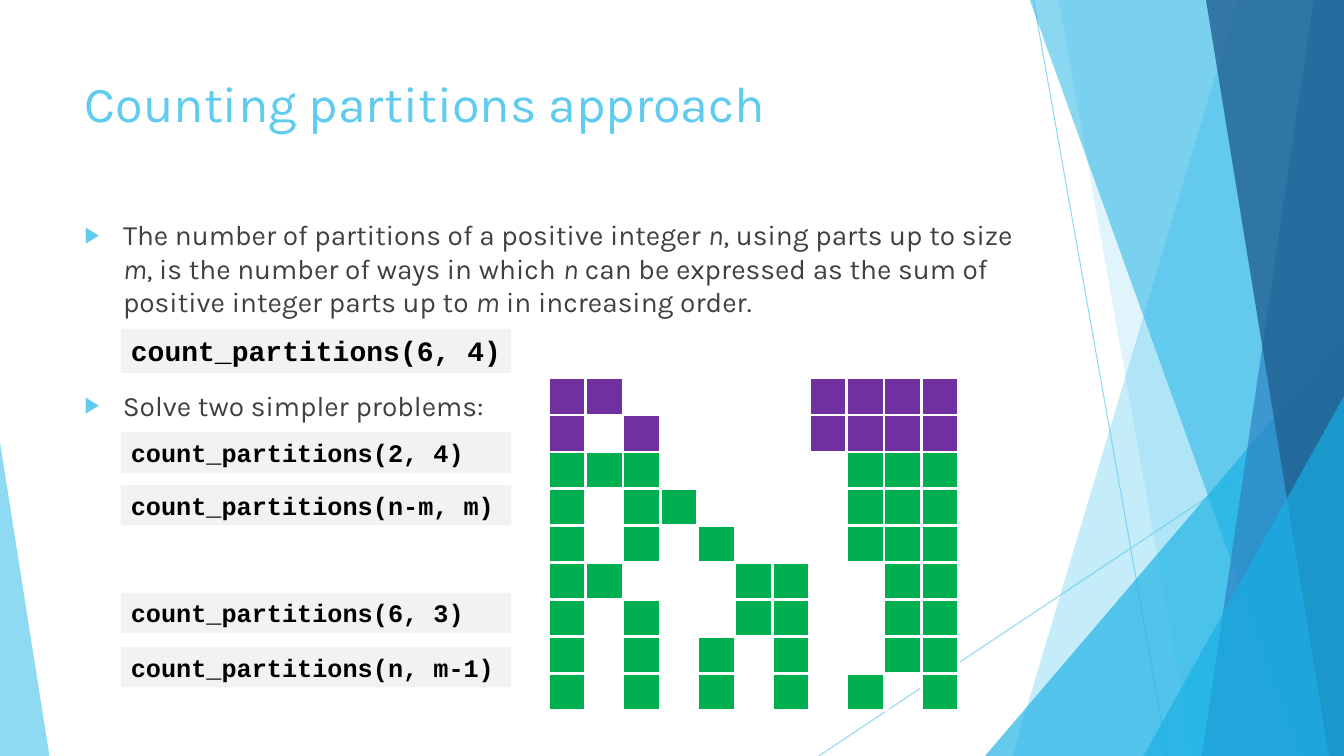
from dataclasses import dataclass

import pptx
import pptx.dml.color
import pptx.enum.shapes
import pptx.enum.text
import pptx.oxml
import pptx.oxml.ns
import pptx.util

Inches = pptx.util.Inches
Pt = pptx.util.Pt
qn = pptx.oxml.ns.qn
Kind = pptx.enum.shapes.MSO_SHAPE
Anchor = pptx.enum.text.MSO_ANCHOR

WIDE, HIGH = 13.33, 7.5
SPACE = 'xmlns:a="http://schemas.openxmlformats.org/drawingml/2006/main"'
COLORS = {
    "sky": "5FCBEF", "cyan": "17B0E4", "blue": "2E83C3", "navy": "226292",
    "text": "404040", "code": "000000", "box": "F2F2F2", "white": "FFFFFF",
    "purple": "7030A0", "green": "00B050",
}


@dataclass
class Band:
    top: float
    base: float
    color: str
    alpha: int


@dataclass
class Wedge:
    left: float
    top: float
    width: float
    tip: float
    color: str
    alpha: int


@dataclass
class Ray:
    start: tuple[float, float]
    end: tuple[float, float]


@dataclass
class Call:
    text: str
    top: float
    height: float = 0.4
    size: int = 18


@dataclass
class Grid:
    color: str
    rows: list[str]


DECOR = [
    Ray((10.25, 0), (11.58, HIGH)),
    Ray((WIDE, 4.03), (8.12, HIGH)),
    Band(12.28, 10.04, "sky", 36),
    Band(10.5, 11.83, "sky", 20),
    Wedge(9.77, 3.33, 3.56, 1, "cyan", 66),
    Band(10.21, 12.91, "cyan", 50),
    Band(13.03, 11.92, "blue", 70),
    Band(11.96, 13.18, "navy", 80),
    Wedge(11.34, 3.93, 1.99, 1, "cyan", 66),
    Wedge(0, 4.39, 0.49, 0, "sky", 70),
]
BLANK = "." * 11
TOP_GRID = Grid("purple", ["##.....####", "#.#....####"] + [BLANK] * 7)
LOW_GRID = Grid("green", [BLANK] * 2 + [
    "###.....###",
    "#.##....###",
    "#.#.#...###",
    "##...##..##",
    "#.#..##..##",
    "#.#.#.#..##",
    "#.#.#.#.#.#",
])
MAIN_CALL = Call("count_partitions(6, 4)", 3.26, 0.44, 20)
SUB_CALLS = [
    Call("count_partitions(2, 4)", 4.29),
    Call("count_partitions(n-m, m)", 4.81),
    Call("count_partitions(6, 3)", 5.88),
    Call("count_partitions(n, m-1)", 6.42),
]


def tint(name: str) -> pptx.dml.color.RGBColor:
    return pptx.dml.color.RGBColor.from_string(COLORS[name])


def node(xml: str):
    return pptx.oxml.parse_xml(xml.replace(" ", f" {SPACE} ", 1))


def fade(shape, alpha: int) -> None:
    for color in shape._element.spPr.iter(qn("a:srgbClr")):
        color.append(node(f'<a:alpha val="{alpha * 1000}"/>'))


def paint(shape, color: str, alpha: int = 100) -> None:
    shape.shadow.inherit = False
    shape.fill.solid()
    shape.fill.fore_color.rgb = tint(color)
    shape.line.fill.background()
    if alpha < 100:
        fade(shape, alpha)


def write(shape, text: str, *, size: int, color: str, font: str = "Karla",
          bold: bool = False, bullet: bool = False, anchor=Anchor.TOP) -> None:
    frame = shape.text_frame
    frame.word_wrap = True
    frame.auto_size = pptx.enum.text.MSO_AUTO_SIZE.NONE
    frame.vertical_anchor = anchor
    frame.margin_right = 0
    para = frame.paragraphs[0]
    para.alignment = pptx.enum.text.PP_ALIGN.LEFT
    para.space_before = Pt(10 if bullet else 0)
    if bullet:
        props = para._p.get_or_add_pPr()
        props.set("marL", str(Inches(0.38)))
        props.set("indent", str(-Inches(0.38)))
        for xml in (f'<a:buClr ><a:srgbClr val="{COLORS["sky"]}"/></a:buClr>',
                    '<a:buSzPct val="80000"/>', '<a:buFont typeface="Arial"/>',
                    '<a:buChar char="▶"/>'):
            props.append(node(xml))
    for index, part in enumerate(text.split("*")):
        run = para.add_run()
        run.text = part
        run.font.name = font
        run.font.size = Pt(size)
        run.font.bold = bold
        run.font.italic = index % 2 == 1
        run.font.color.rgb = tint(color)


def place(shape, left: float, top: float, width: float, height: float) -> None:
    shape.left, shape.top = Inches(left), Inches(top)
    shape.width, shape.height = Inches(width), Inches(height)


def draw_ray(shapes, ray: Ray) -> None:
    ends = [Inches(value) for value in ray.start + ray.end]
    line = shapes.add_connector(pptx.enum.shapes.MSO_CONNECTOR.STRAIGHT, *ends)
    line.line.color.rgb = tint("sky")
    line.line.width = Pt(0.75)
    fade(line, 70)
    line._element.spPr.append(node("<a:effectLst />"))


def draw_band(shapes, band: Band) -> None:
    pen = shapes.build_freeform(Inches(band.top), Inches(-0.01), scale=1.0)
    ends = [(WIDE, -0.01), (WIDE, HIGH), (band.base, HIGH)]
    pen.add_line_segments([(Inches(x), Inches(y)) for x, y in ends])
    paint(pen.convert_to_shape(), band.color, band.alpha)


def draw_wedge(shapes, wedge: Wedge) -> None:
    shape = shapes.add_shape(
        Kind.ISOSCELES_TRIANGLE, Inches(wedge.left), Inches(wedge.top),
        Inches(wedge.width), Inches(HIGH - wedge.top))
    shape.adjustments[0] = wedge.tip
    paint(shape, wedge.color, wedge.alpha)


def draw_call(shapes, call: Call) -> None:
    box = shapes.add_shape(Kind.RECTANGLE, Inches(1.2), Inches(call.top),
                           Inches(3.87), Inches(call.height))
    paint(box, "box")
    write(box, call.text, size=call.size, color="code", font="Courier New",
          bold=True, anchor=Anchor.MIDDLE)


def draw_grid(shapes, grid: Grid) -> None:
    high, wide = len(grid.rows), len(grid.rows[0])
    table = shapes.add_table(high, wide, Inches(5.44), Inches(3.75),
                             Inches(4.07), Inches(3.3)).table
    table.first_row = table.horz_banding = False
    for index, row in enumerate(grid.rows):
        for spot, mark in enumerate(row):
            cell = table.cell(index, spot)
            cell.margin_left = cell.margin_right = 0
            cell.margin_top = cell.margin_bottom = 0
            for side in "LRTB":
                cell._tc.get_or_add_tcPr().append(node(
                    f'<a:ln{side} w="{Pt(2.25)}"><a:solidFill><a:srgbClr '
                    f'val="{COLORS["white"]}"/></a:solidFill></a:ln{side}>'))
            if mark == "#":
                cell.fill.solid()
                cell.fill.fore_color.rgb = tint(grid.color)
            else:
                cell.fill.background()


def main() -> None:
    deck = pptx.Presentation()
    deck.slide_width, deck.slide_height = Inches(WIDE), Inches(HIGH)
    slide = deck.slides.add_slide(deck.slide_layouts[1])
    shapes = slide.shapes
    title, body = shapes.title, slide.placeholders[1]
    draws = {Ray: draw_ray, Band: draw_band, Wedge: draw_wedge}
    for item in DECOR:
        draws[type(item)](shapes, item)

    place(title, 0.74, 0.67, 9.4, 1.44)
    write(title, "Counting partitions approach", size=36, color="sky")
    place(body, 0.74, 2.11, 9.4, 5.23)
    write(body, "The number of partitions of a positive integer *n*, using parts "
          "up to size *m*, is the number of ways in which *n* can be expressed as "
          "the sum of positive integer parts up to *m* in increasing order.",
          size=20, color="text", bullet=True)
    draw_call(shapes, MAIN_CALL)
    draw_grid(shapes, TOP_GRID)
    note = shapes.add_textbox(0, 0, 0, 0)
    place(note, 0.74, 3.8, 4.53, 3.62)
    write(note, "Solve two simpler problems:", size=20, color="text", bullet=True)
    draw_grid(shapes, LOW_GRID)
    for call in SUB_CALLS:
        draw_call(shapes, call)
    deck.save("out.pptx")


if __name__ == "__main__":
    main()
